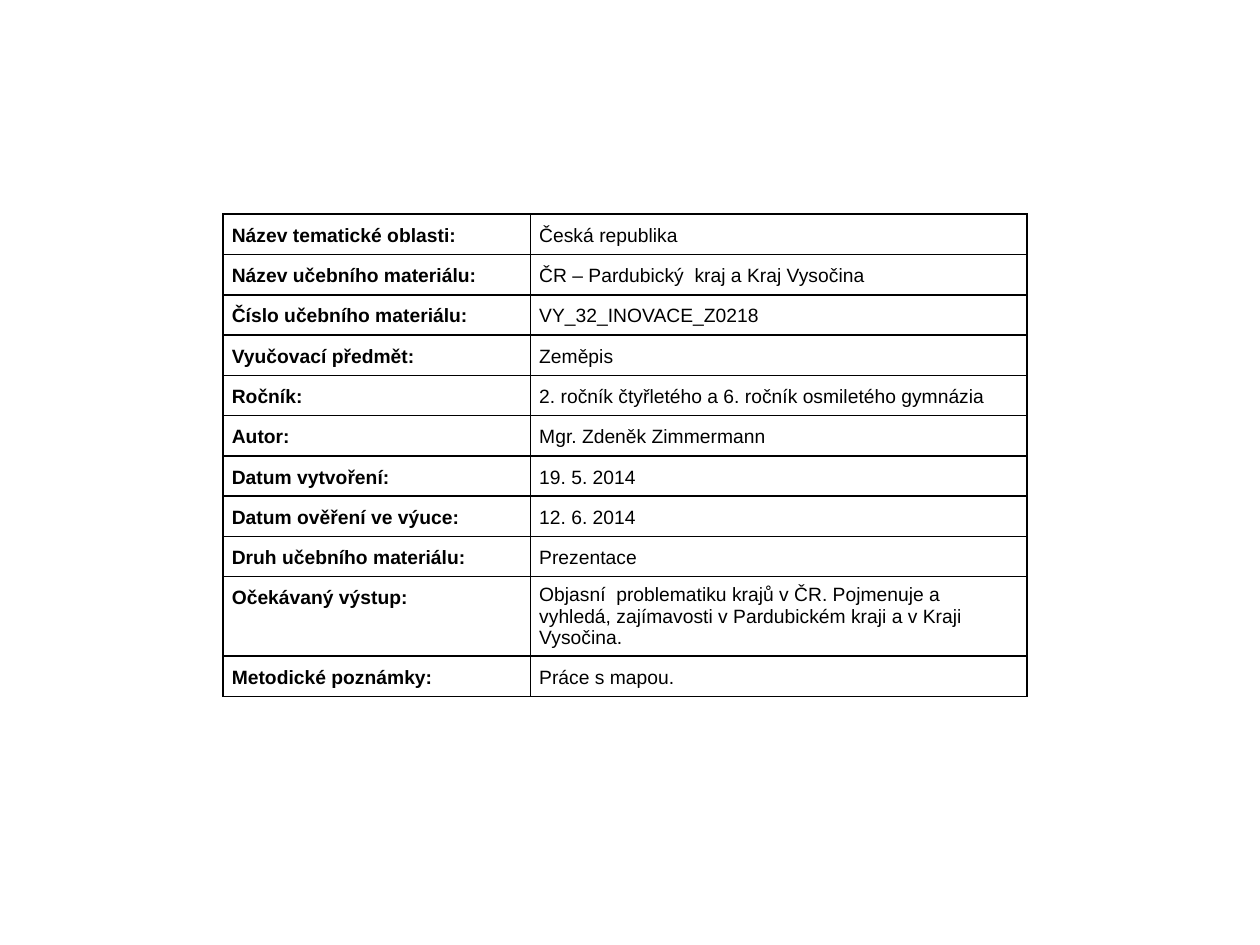
from lxml.etree import SubElement
from pptx import Presentation
from pptx.dml.color import RGBColor
from pptx.enum.text import PP_ALIGN as Align
from pptx.oxml.ns import qn
from pptx.util import Inches, Pt

BLACK = RGBColor(0x00, 0x00, 0x00)

LEFT, TOP = 1.77, 1.70
COLUMN_WIDTHS = [2.44, 3.94]
ROW_HEIGHT, OUTCOME_HEIGHT = 0.32, 0.63
OUTCOME_LABEL = "Očekávaný výstup:"

ROWS = [
    ("Název tematické oblasti:", "Česká republika"),
    ("Název učebního materiálu:", "ČR – Pardubický  kraj a Kraj Vysočina"),
    ("Číslo učebního materiálu:", "VY_32_INOVACE_Z0218"),
    ("Vyučovací předmět:", "Zeměpis"),
    ("Ročník:", "2. ročník čtyřletého a 6. ročník osmiletého gymnázia"),
    ("Autor:", "Mgr. Zdeněk Zimmermann"),
    ("Datum vytvoření:", "19. 5. 2014"),
    ("Datum ověření ve výuce:", "12. 6. 2014"),
    ("Druh učebního materiálu:", "Prezentace"),
    (OUTCOME_LABEL, "Objasní  problematiku krajů v ČR. Pojmenuje a vyhledá, "
                    "zajímavosti v Pardubickém kraji a v Kraji Vysočina."),
    ("Metodické poznámky:", "Práce s mapou."),
]
FIRST_JUSTIFIED_LABEL = 8

CELL_FORMAT = {
    "margin_left": Inches(0.07), "margin_right": Inches(0.07),
    "margin_top": Inches(0.06), "margin_bottom": Inches(0.05),
}
FONT_FORMAT = {"name": "Arial", "size": Pt(11)}
LABEL_FORMAT = {"alignment": Align.LEFT, "line_spacing": 1.15}
JUSTIFIED_FORMAT = {"alignment": Align.JUSTIFY, "line_spacing": 1.15}
OUTCOME_FORMAT = {"alignment": Align.LEFT, "line_spacing": 1.0}


def apply_format(target, values):
    for name, value in values.items():
        setattr(target, name, value)


def add_borders(cell):
    properties = cell._tc.get_or_add_tcPr()
    for side in ("a:lnL", "a:lnR", "a:lnT", "a:lnB"):
        line = SubElement(properties, qn(side), w=str(Pt(1)))
        fill = SubElement(line, qn("a:solidFill"))
        SubElement(fill, qn("a:srgbClr"), val=str(BLACK))


def fill_cell(cell, text, paragraph_format, bold):
    apply_format(cell, CELL_FORMAT)
    add_borders(cell)
    cell.fill.background()
    paragraph = cell.text_frame.paragraphs[0]
    apply_format(paragraph, paragraph_format)
    run = paragraph.add_run()
    run.text = text
    apply_format(run.font, FONT_FORMAT | {"bold": bold})
    run.font.color.rgb = BLACK


def add_material_table(slide):
    heights = [OUTCOME_HEIGHT if label == OUTCOME_LABEL else ROW_HEIGHT
               for label, _ in ROWS]
    table = slide.shapes.add_table(
        len(ROWS), len(COLUMN_WIDTHS), Inches(LEFT), Inches(TOP),
        Inches(sum(COLUMN_WIDTHS)), Inches(sum(heights))).table
    apply_format(table, {"first_row": False, "horz_banding": False})
    for column, width in zip(table.columns, COLUMN_WIDTHS):
        column.width = Inches(width)

    for index, (label, value) in enumerate(ROWS):
        table.rows[index].height = Inches(heights[index])
        justified = index >= FIRST_JUSTIFIED_LABEL
        fill_cell(table.cell(index, 0), label,
                  JUSTIFIED_FORMAT if justified else LABEL_FORMAT, True)
        is_outcome = label == OUTCOME_LABEL
        fill_cell(table.cell(index, 1), value,
                  OUTCOME_FORMAT if is_outcome else JUSTIFIED_FORMAT, False)


def main():
    presentation = Presentation()
    apply_format(presentation, {"slide_width": Inches(10),
                                "slide_height": Inches(7.5)})
    # Blank layout
    slide = presentation.slides.add_slide(presentation.slide_layouts[6])
    # Overview of the teaching material
    add_material_table(slide)
    presentation.save("out.pptx")


if __name__ == "__main__":
    main()
